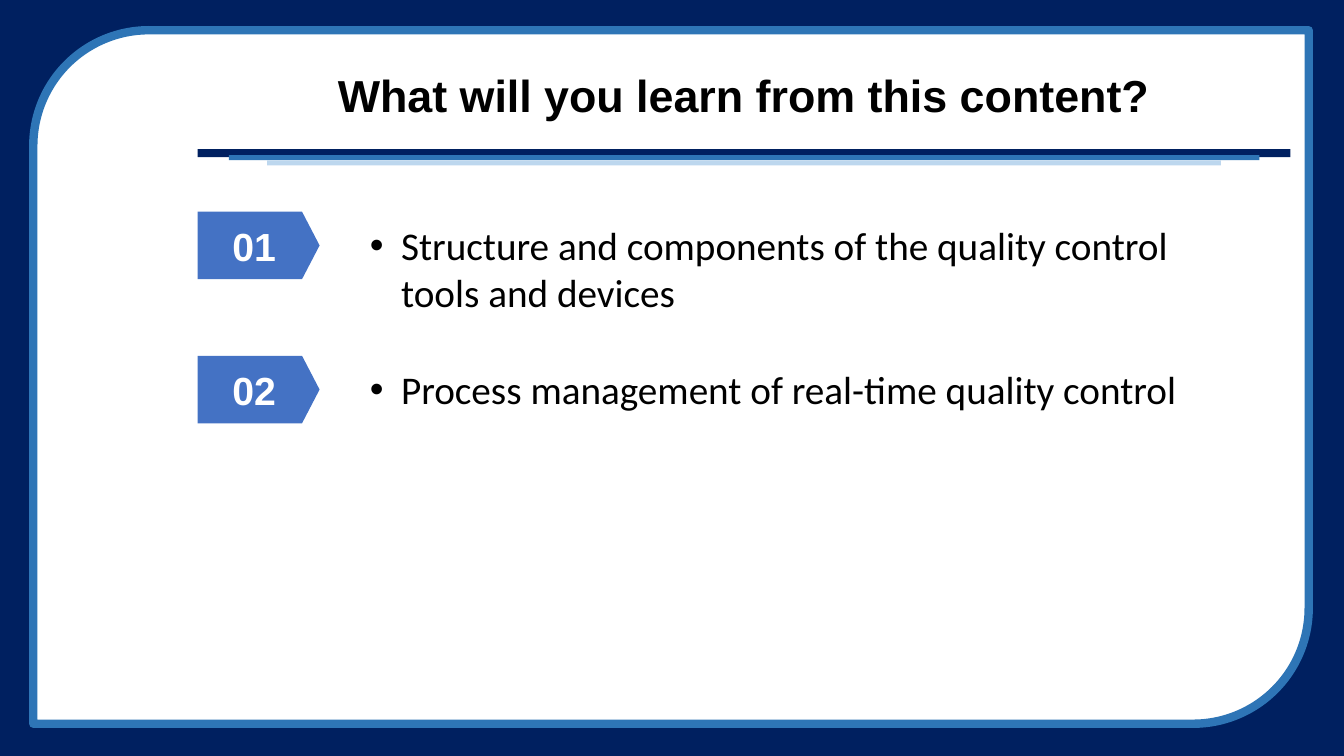
from lxml.etree import SubElement
from pptx import Presentation
from pptx.dml.color import RGBColor
from pptx.enum.shapes import MSO_SHAPE
from pptx.enum.text import MSO_ANCHOR, MSO_AUTO_SIZE, PP_ALIGN
from pptx.oxml.ns import qn
from pptx.util import Inches, Pt

COLORS = {
    "navy": "002060", "blue": "2E75B6", "pale": "BDD7EE",
    "marker": "4472C4", "white": "FFFFFF", "black": "000000",
}
WIDTH, HEIGHT = 13.33, 7.5
CONTENT_LEFT, CONTENT_WIDTH = 1.96, 10.84
TOPICS = [
    ("Structure and components of the quality control tools and devices", 1.04),
    ("Process management of real-time quality control", 0.57),
]


def color(name):
    return RGBColor.from_string(COLORS[name])


def place(shapes, preset, box, fill):
    shape = shapes.add_shape(preset, *map(Inches, box))
    shape.shadow.inherit = False
    shape.fill.solid()
    shape.fill.fore_color.rgb = color(fill)
    shape.line.fill.background()
    return shape


def style(paragraph, size, font_name, font_color, bold=False):
    font = paragraph.font
    font.size, font.name, font.bold = Pt(size), font_name, bold
    font.color.rgb = color(font_color)


def add_bullet(paragraph, indent):
    properties = paragraph._p.get_or_add_pPr()
    properties.set("marL", str(Inches(indent)))
    properties.set("indent", str(-Inches(indent)))
    SubElement(properties, qn("a:buFont"), typeface="Arial")
    SubElement(properties, qn("a:buChar"), char="•")


def add_frame(slide, width, height):
    place(slide.shapes, MSO_SHAPE.RECTANGLE, (0, 0, width, height), "navy")
    panel = place(slide.shapes, MSO_SHAPE.ROUND_2_DIAG_RECTANGLE,
                  (0.33, 0.3, width - 0.68, height - 0.62), "white")
    panel.line.color.rgb = color("blue")
    panel.line.width = Pt(6)


def add_header(slide, left, top, width):
    """Title over three centred rules, each narrower than the one above."""
    rules = slide.shapes.add_group_shape()
    for inset, drop, thickness, fill in [
        (0, 0.99, 0.08, "navy"),
        (0.31, 1.05, 0.05, "blue"),
        (0.69, 1.1, 0.05, "pale"),
    ]:
        place(rules.shapes, MSO_SHAPE.RECTANGLE,
              (left + inset, top + drop, width - 2 * inset, thickness), fill)

    title = slide.shapes.title
    title.left, title.top = Inches(left), Inches(top)
    title.width, title.height = Inches(width), Inches(0.97)
    slide.shapes.element.append(title.element)  # bring in front of the panel
    frame = title.text_frame
    frame.text = "What will you learn from this content?"
    frame.vertical_anchor = MSO_ANCHOR.MIDDLE
    heading = frame.paragraphs[0]
    heading.alignment = PP_ALIGN.CENTER
    heading.line_spacing = 0.9
    style(heading, 32, "Arial", "black", bold=True)


def add_topic(slide, left, top, number, wording, text_height):
    marker = place(slide.shapes, MSO_SHAPE.PENTAGON, (left, top, 1.21, 0.67), "marker")
    marker.adjustments[0] = 0.26
    marker.text_frame.text = f"{number:02}"
    marker.text_frame.vertical_anchor = MSO_ANCHOR.MIDDLE
    label = marker.text_frame.paragraphs[0]
    label.alignment = PP_ALIGN.CENTER
    style(label, 28, "Arial", "white", bold=True)

    description = slide.shapes.add_textbox(
        *map(Inches, (left + 1.61, top + 0.05, 8.94, text_height)))
    frame = description.text_frame
    frame.word_wrap = True
    frame.auto_size = MSO_AUTO_SIZE.SHAPE_TO_FIT_TEXT
    frame.text = wording
    add_bullet(frame.paragraphs[0], 0.31)
    style(frame.paragraphs[0], 28, "Calibri", "black")


def add_topics(slide, left, top, pitch):
    for index, (wording, text_height) in enumerate(TOPICS):
        add_topic(slide, left, top + index * pitch, index + 1, wording, text_height)


def main():
    deck = Presentation()
    deck.slide_width, deck.slide_height = Inches(WIDTH), Inches(HEIGHT)
    slide = deck.slides.add_slide(deck.slide_layouts[5])
    add_frame(slide, WIDTH, HEIGHT)
    add_header(slide, CONTENT_LEFT, 0.49, CONTENT_WIDTH)
    add_topics(slide, CONTENT_LEFT, 2.1, 1.43)
    deck.save("out.pptx")


if __name__ == "__main__":
    main()
